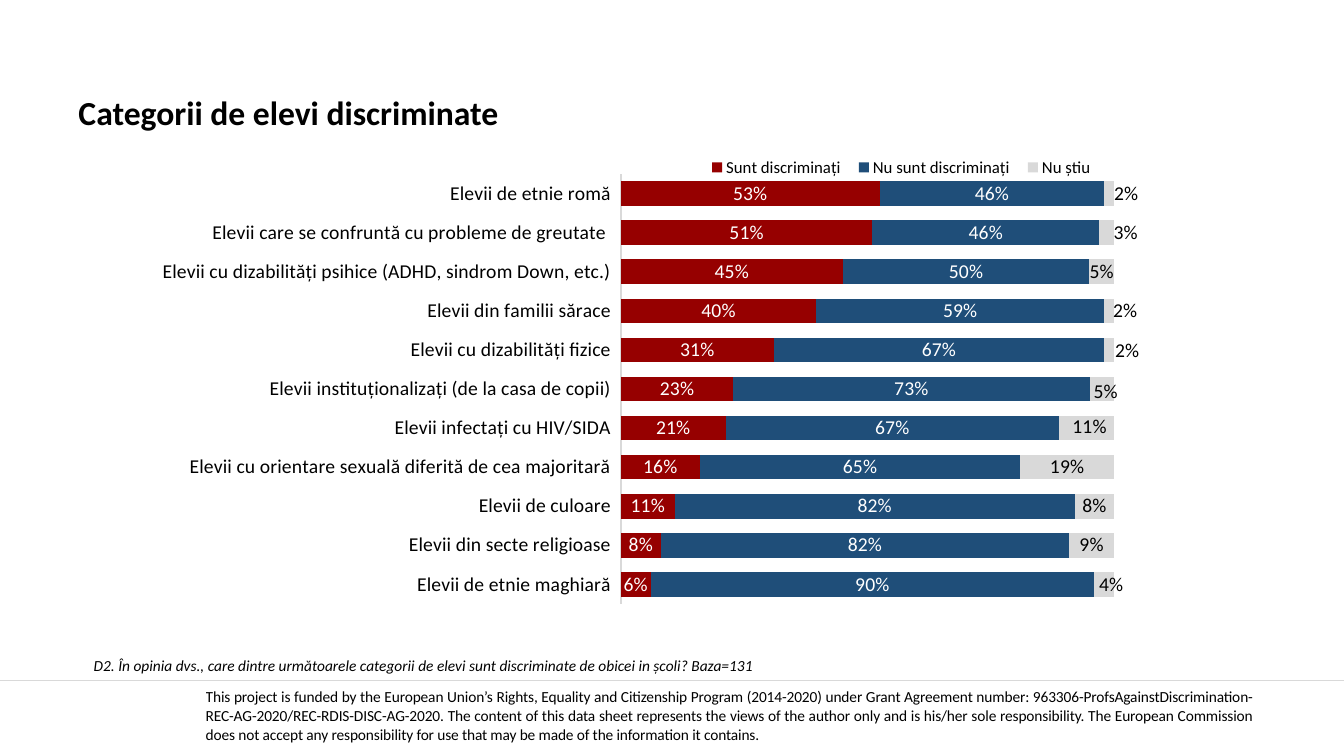
from pptx import Presentation
from pptx.chart.data import CategoryChartData
from pptx.dml.color import RGBColor
from pptx.enum.chart import XL_CHART_TYPE as CT, XL_LABEL_POSITION as LP
from pptx.enum.chart import XL_LEGEND_POSITION as LEG, XL_TICK_LABEL_POSITION as TLP
from pptx.enum.chart import XL_TICK_MARK as TM
from pptx.enum.shapes import MSO_CONNECTOR
from pptx.enum.text import MSO_ANCHOR, MSO_AUTO_SIZE, PP_ALIGN
from pptx.oxml import parse_xml
from pptx.oxml.ns import nsdecls, qn
from pptx.util import Pt

PX = 9144  # 100 px to the inch
SLIDE = (1333, 750)
RULE_Y = 675
TITLE = ("Categorii de elevi discriminate", (68, 86, 531, 50))
QUESTION = ("D2. În opinia dvs., care dintre următoarele categorii de elevi sunt "
            "discriminate de obicei in școli? Baza=131", (83, 646, 1205, 29))
FUNDING = ("This project is funded by the European Union’s Rights, Equality and Citizenship "
           "Program (2014-2020) under Grant Agreement number: "
           "963306-ProfsAgainstDiscrimination-REC-AG-2020/REC-RDIS-DISC-AG-2020. "
           "The content of this data sheet represents the views of the author only and is "
           "his/her sole responsibility. The European Commission does not accept any "
           "responsibility for use that may be made of the information it contains.",
           (204, 659, 1039, 104))
CHART_BOX = (-10, 145, 1145, 502)
SERIES = ("Sunt discriminați", "Nu sunt discriminați", "Nu știu")
ROWS = [
    ("Elevii de etnie romă", 0.53, 0.46, 0.02),
    ("Elevii care se confruntă cu probleme de greutate ", 0.51, 0.46, 0.03),
    ("Elevii cu dizabilități psihice (ADHD, sindrom Down, etc.)", 0.45, 0.5, 0.05),
    ("Elevii din familii sărace", 0.4, 0.59, 0.02),
    ("Elevii cu dizabilități fizice", 0.31, 0.67, 0.02),
    ("Elevii instituționalizați (de la casa de copii)", 0.23, 0.73, 0.05),
    ("Elevii infectați cu HIV/SIDA", 0.21, 0.67, 0.11),
    ("Elevii cu orientare sexuală diferită de cea majoritară", 0.16, 0.65, 0.19),
    ("Elevii de culoare", 0.11, 0.82, 0.08),
    ("Elevii din secte religioase", 0.08, 0.82, 0.09),
    ("Elevii de etnie maghiară", 0.06, 0.9, 0.04),
]
# Label shifts of the last series in px: row -> (right, down)
SHIFTS = {0: (17, 0), 1: (19, 0), 3: (16, 0), 4: (18, 1), 5: (4, 3), 6: (3, -1), 10: (7, 0)}
PLOT = (626, 28, 489, 426)
LEGEND = (704, 9, 400, 24)

THEME = {
    "font": "Calibri", "text": "000000", "line": "D9D9D9",
    "bars": ("960000", "1F4E79", "D9D9D9"), "labels": ("FFFFFF", "FFFFFF", "000000"),
    "title": 24, "note": 11, "axis": 14, "legend": 12, "chart": 10,
}
PERCENT = "###0%"


def rgb(code):
    return RGBColor.from_string(code)


def emu(box):
    return [v * PX for v in box]


def style(font, size, color=THEME["text"], **more):
    for key, value in {"name": THEME["font"], "size": Pt(THEME[size]), **more}.items():
        setattr(font, key, value)
    font.color.rgb = rgb(color)


def layout(box, edge=True, inner=False):
    """Manual chart layout from a px box, or a shift when edge is False."""
    parts = ['<c:layoutTarget val="inner"/>'] if inner else []
    if edge:
        parts += ['<c:xMode val="edge"/>', '<c:yMode val="edge"/>']
    for tag, value, total in zip("xywh", box, CHART_BOX[2:] * 2):
        parts.append(f'<c:{tag} val="{value / total:.4f}"/>')
    return parse_xml(f'<c:layout {nsdecls("c")}><c:manualLayout>{"".join(parts)}'
                     '</c:manualLayout></c:layout>')


def put_layout(parent, new, after=None):
    for old in parent.findall(qn("c:layout")):
        parent.remove(old)
    if after is None:
        parent.insert(0, new)
    else:
        parent.find(qn(after)).addnext(new)


def add_text(slide, content, size, **more):
    text, box = content
    tf = slide.shapes.add_textbox(*emu(box)).text_frame
    tf.word_wrap = True
    tf.auto_size = MSO_AUTO_SIZE.SHAPE_TO_FIT_TEXT
    r = tf.paragraphs[0].add_run()
    r.text = text
    style(r.font, size, **more)


def add_funding(slide):
    text, box = FUNDING
    table = slide.shapes.add_table(1, 1, *emu(box)).table
    table.first_row = table.horz_banding = False
    cell = table.cell(0, 0)
    cell.fill.background()
    cell.vertical_anchor = MSO_ANCHOR.MIDDLE
    for side in ("left", "top", "right", "bottom"):
        setattr(cell, f"margin_{side}", 0)
    p = cell.text_frame.paragraphs[0]
    p.alignment = PP_ALIGN.JUSTIFY
    r = p.add_run()
    r.text = text
    style(r.font, "note")
    r.font._element.set("spc", "-10")


def add_bars(slide):
    data = CategoryChartData(number_format=PERCENT)
    data.categories = [row[0] for row in ROWS]
    for i, name in enumerate(SERIES, 1):
        data.add_series(name, [row[i] for row in ROWS])
    chart = slide.shapes.add_chart(CT.BAR_STACKED_100, *emu(CHART_BOX), data).chart
    style(chart.font, "chart")
    chart.has_title = False
    chart.has_legend = True
    legend = chart.legend
    legend.position, legend.include_in_layout = LEG.TOP, False
    style(legend.font, "legend")
    put_layout(legend._element, layout(LEGEND), "c:legendPos")

    cats, vals = chart.category_axis, chart.value_axis
    cats.reverse_order = True
    cats.major_tick_mark = cats.minor_tick_mark = TM.NONE
    cats.tick_label_position = TLP.LOW
    cats.format.line.color.rgb = rgb(THEME["line"])
    cats.format.line.width = Pt(0.75)
    style(cats.tick_labels.font, "axis")
    vals.visible = vals.has_major_gridlines = False
    vals.minimum_scale = 0

    plot = chart.plots[0]
    plot.gap_width, plot.overlap, plot.vary_by_categories = 57, 100, False
    put_layout(chart._chartSpace.chart.plotArea, layout(PLOT, inner=True))
    for s, fill, color in zip(plot.series, THEME["bars"], THEME["labels"]):
        s.format.fill.solid()
        s.format.fill.fore_color.rgb = rgb(fill)
        labels = s.data_labels
        labels.show_value, labels.position = True, LP.CENTER
        labels.number_format, labels.number_format_is_linked = PERCENT, False
        style(labels.font, "axis", color)

    last = plot.series[len(SERIES) - 1]
    for i, shift in SHIFTS.items():
        label = last.points[i].data_label
        label.position = LP.CENTER
        style(label.font, "axis")
    for d in last.data_labels._element.findall(qn("c:dLbl")):
        i = int(d.find(qn("c:idx")).get("val"))
        put_layout(d, layout(SHIFTS[i], edge=False), "c:idx")


def add_rule(slide):
    line = slide.shapes.add_connector(MSO_CONNECTOR.STRAIGHT,
                                      *emu((0, RULE_Y, SLIDE[0], RULE_Y)))
    line.line.color.rgb = rgb(THEME["line"])
    line.line.width = Pt(0.5)
    line._element.spPr.append(parse_xml(f'<a:effectLst {nsdecls("a")}/>'))


def main():
    prs = Presentation()
    prs.slide_width, prs.slide_height = emu(SLIDE)
    slide = prs.slides.add_slide(prs.slide_layouts[6])
    add_funding(slide)
    add_bars(slide)
    add_rule(slide)
    add_text(slide, QUESTION, "note", italic=True)
    add_text(slide, TITLE, "title", bold=True)
    prs.save("out.pptx")


if __name__ == "__main__":
    main()
